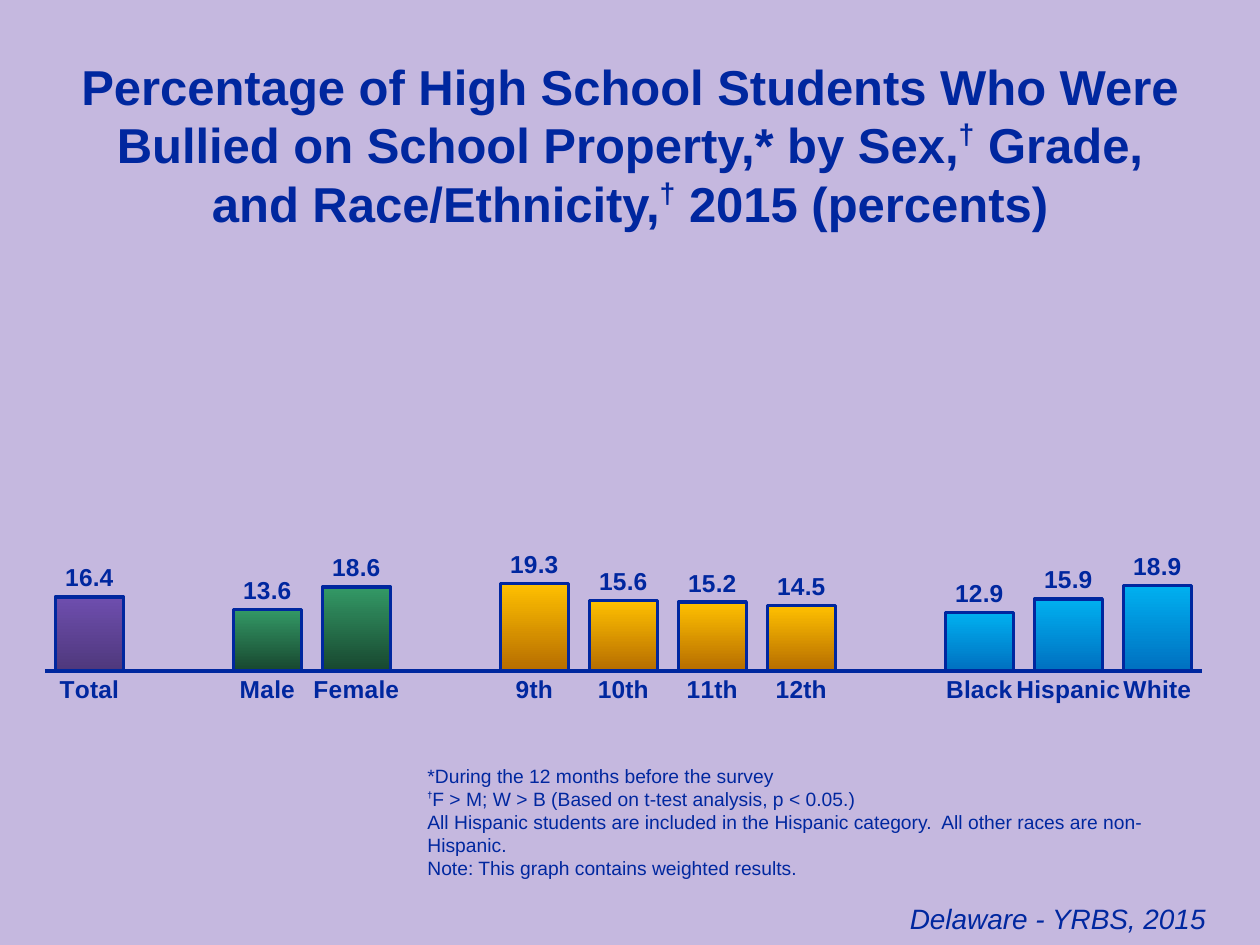
from dataclasses import dataclass
from lxml import etree
from pptx import Presentation
from pptx import util as u
from pptx.chart.data import CategoryChartData
from pptx.dml.color import RGBColor
from pptx.enum import chart as ch, text as tx
from pptx.oxml import parse_xml
from pptx.oxml.ns import nsdecls


@dataclass(frozen=True)
class Theme:
    font: str = "Arial"
    ink: str = "00279F"
    back: str = "C5B8DF"
    title: int = 28
    label: int = 14
    note: int = 11
    mark: int = 9
    foot: int = 16


T = Theme()

# Content: a run is (text, extra styles)
TITLE = [[
    ("Percentage of High School Students Who Were Bullied on School Property,* by Sex,", {}),
    ("†", {"sup": 40}),
    (" Grade, and Race/Ethnicity,", {}),
    ("†", {"sup": 40}),
    (" 2015 (percents)", {}),
]]
NOTES = [
    [("*During the 12 months before the survey", {})],
    [("†", {"size": T.mark, "bold": True, "sup": 50}),
     ("F > M; W > B (Based on t-test analysis, p < 0.05.)", {})],
    [("All Hispanic students are included in the Hispanic category.  "
      "All other races are non-Hispanic.", {})],
    [("Note: This graph contains weighted results.", {})],
]
FOOT = [[("Delaware - YRBS, 2015 ", {})]]

# Bar groups: (top colour, bottom colour, bars)
GROUPS = [
    ("6E4EAE", "4F387C", [("Total", 16.4)]),
    ("339966", "18472F", [("Male", 13.6), ("Female", 18.6)]),
    ("FFC000", "B66D00", [("9th", 19.3), ("10th", 15.6), ("11th", 15.2), ("12th", 14.5)]),
    ("00B0F0", "0070C0", [("Black", 12.9), ("Hispanic", 15.9), ("White", 18.9)]),
]

# Places in px: left, top, width, height
SIZE = (1260, 945)
TITLE_BOX = (63, 50, 1134, 190)
NOTE_BOX = (415, 756, 782, 130)
FOOT_BOX = (42, 895, 1184, 47)
CHART_BOX = (21, 210, 1205, 504)
PLOT_BOX = (45, 220, 1157, 451)


def px(n):
    return int(n * 914400 / 126)


def rgb(code):
    return RGBColor.from_string(code)


def style(font, size, bold=False, italic=False):
    font.name, font.size = T.font, u.Pt(size)
    font.bold, font.italic = bold, italic
    font.color.rgb = rgb(T.ink)


def add_text(slide, box, paras, size, align, anchor=tx.MSO_ANCHOR.TOP, **look):
    frame = slide.shapes.add_textbox(*map(px, box)).text_frame
    frame.word_wrap = True
    frame.vertical_anchor = anchor
    for i, runs in enumerate(paras):
        para = frame.add_paragraph() if i else frame.paragraphs[0]
        para.alignment = align
        for words, extra in runs:
            run = para.add_run()
            run.text = words
            opts = {"size": size, **look, **extra}
            sup = opts.pop("sup", 0)
            style(run.font, **opts)
            if sup:
                run.font._element.set("baseline", str(sup * 1000))


def set_plot(chart):
    """Pin the inner plot area as fractions of the chart."""
    left, top, wide, high = CHART_BOX
    x, y, w, h = PLOT_BOX
    parts = {"x": (x - left) / wide, "y": (y - top) / high, "w": w / wide, "h": h / high}
    modes = "".join(f'<c:{k}Mode val="edge"/>' for k in "xy")
    sizes = "".join(f'<c:{k} val="{v:.4f}"/>' for k, v in parts.items())
    area = chart._chartSpace.chart.plotArea
    for old in area.findall("{*}layout"):
        area.remove(old)
    area.insert(0, parse_xml(
        f'<c:layout {nsdecls("c")}><c:manualLayout><c:layoutTarget val="inner"/>'
        f'{modes}{sizes}</c:manualLayout></c:layout>'))


def add_bars(slide):
    # One empty slot stands between groups
    slots = []
    for top, low, bars in GROUPS:
        if slots:
            slots.append(("", None, None))
        slots += [(name, val, (top, low)) for name, val in bars]
    data = CategoryChartData()
    data.categories = [s[0] for s in slots]
    data.add_series("Series 1", [s[1] for s in slots])
    chart = slide.shapes.add_chart(
        ch.XL_CHART_TYPE.COLUMN_CLUSTERED, *map(px, CHART_BOX), data).chart
    chart.has_legend = chart.has_title = False
    style(chart.font, T.label, bold=True)
    set_plot(chart)

    # Axes
    cat, val = chart.category_axis, chart.value_axis
    cat.major_tick_mark = cat.minor_tick_mark = ch.XL_TICK_MARK.NONE
    cat.format.line.color.rgb = rgb(T.ink)
    cat.format.line.width = u.Pt(2)
    style(cat.tick_labels.font, T.label, bold=True)
    val.visible = val.has_major_gridlines = False
    val.minimum_scale, val.maximum_scale, val.major_unit = 0, 100, 20

    # Bars and labels
    plot = chart.plots[0]
    plot.gap_width, plot.overlap, plot.vary_by_categories = 31, 100, False
    plot.has_data_labels = True
    labels = plot.data_labels
    labels.show_value = True
    labels.position = ch.XL_LABEL_POSITION.OUTSIDE_END
    style(labels.font, T.label, bold=True)
    for i, (_, _, shades) in enumerate(slots):
        if not shades:
            continue
        form = plot.series[0].points[i].format
        form.fill.gradient()
        form.fill.gradient_angle = 270
        for stop, shade in zip(form.fill.gradient_stops, shades):
            stop.color.rgb = rgb(shade)
        form.line.color.rgb = rgb(T.ink)
        form.line.width = u.Pt(2)


def main():
    deck = Presentation()
    deck.slide_width, deck.slide_height = map(px, SIZE)
    slide = deck.slides.add_slide(deck.slide_layouts[6])
    slide.background.fill.solid()
    slide.background.fill.fore_color.rgb = rgb(T.back)
    side = tx.PP_ALIGN
    add_text(slide, TITLE_BOX, TITLE, T.title, side.CENTER, bold=True)
    add_text(slide, NOTE_BOX, NOTES, T.note, side.LEFT, tx.MSO_ANCHOR.BOTTOM)
    add_text(slide, FOOT_BOX, FOOT, T.foot, side.RIGHT, italic=True)
    add_bars(slide)
    deck.save("out.pptx")


if __name__ == "__main__":
    main()
